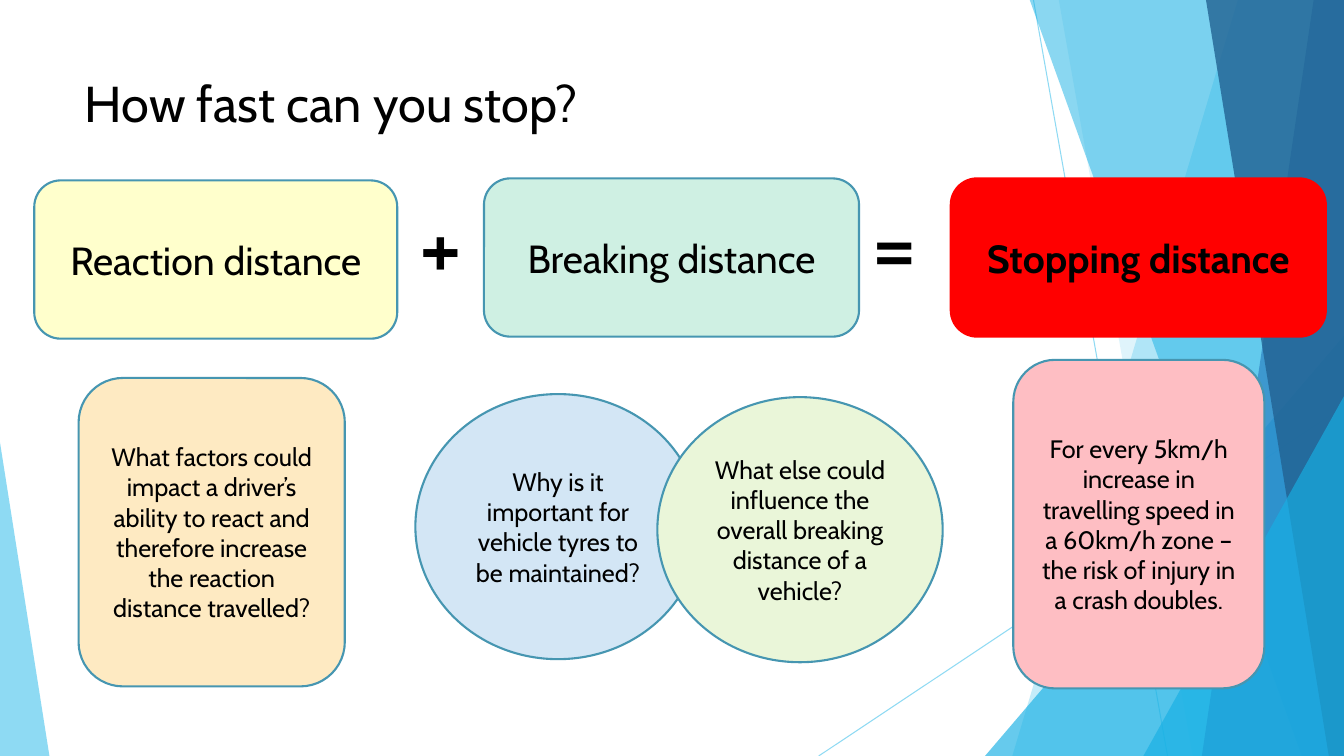
from dataclasses import dataclass

from lxml.etree import SubElement
from pptx import Presentation
from pptx.dml.color import RGBColor
from pptx.dml.fill import FillFormat
from pptx.enum.shapes import MSO_CONNECTOR, MSO_SHAPE
from pptx.enum.text import MSO_ANCHOR, MSO_AUTO_SIZE, PP_ALIGN
from pptx.oxml.ns import qn
from pptx.shapes.autoshape import Shape
from pptx.slide import Slide
from pptx.text.text import TextFrame
from pptx.util import Inches, Pt

WIDTH, HEIGHT = 13.33, 7.5
TOP = -0.01
FONT = "Cabin"
BLACK, OUTLINE = "000000", "4696B1"
SKY, AZURE, STEEL, NAVY = "5FCBEF", "17B0E4", "2E83C3", "226292"
ROUNDED, OVAL = MSO_SHAPE.ROUNDED_RECTANGLE, MSO_SHAPE.OVAL


@dataclass
class Ray:
    start: tuple[float, float]
    end: tuple[float, float]


@dataclass
class Band:
    """Facet reaching the right edge, from top_left down to bottom_left."""
    top_left: float
    bottom_left: float
    color: str
    opacity: int


@dataclass
class Wedge:
    left: float
    top: float
    width: float
    tip: float
    color: str
    opacity: int


@dataclass
class Card:
    text: str
    left: float
    top: float
    width: float
    height: float
    fill: str
    kind: MSO_SHAPE = ROUNDED
    size: int = 18
    line: str = OUTLINE
    bold: bool = False


@dataclass
class Operator:
    text: str
    left: float


RAYS = [Ray((10.25, 0), (11.58, HEIGHT)), Ray((WIDTH, 4.03), (8.12, HEIGHT))]

FACETS = [
    Band(12.28, 10.04, SKY, 36),
    Band(10.5, 11.83, SKY, 20),
    Wedge(9.77, 3.33, 3.56, 1, AZURE, 66),
    Band(10.21, 12.91, AZURE, 50),
    Band(13.03, 11.92, STEEL, 70),
    Band(11.96, 13.18, NAVY, 80),
    Wedge(11.34, 3.93, 1.99, 1, AZURE, 66),
    Wedge(0, 4.39, 0.49, 0, SKY, 70),
]

OPERATORS = [Operator("+", 3.92), Operator("=", 8.42)]

CARDS = [
    Card("Stopping distance", 9.43, 1.77, 3.72, 1.57, "FF0000",
         size=28, line="FF0000", bold=True),
    Card("Why is it important for vehicle tyres to be maintained?",
         4.12, 3.91, 2.83, 2.63, "D3E6F5", OVAL),
    Card("What factors could impact a driver’s ability to react and "
         "therefore increase the reaction distance travelled?",
         0.78, 3.75, 2.64, 3.06, "FEEAC2"),
    Card("What else could influence the overall breaking distance of a vehicle?",
         6.52, 3.94, 2.83, 2.63, "EAF6D9", OVAL),
    Card("For every 5km/h increase in travelling speed in a 60km/h zone – "
         "the risk of injury in a crash doubles.",
         10.05, 3.57, 2.49, 3.26, "FEBEC3"),
    Card("Reaction distance", 0.34, 1.79, 3.6, 1.57, "FFFFCC", size=28),
    Card("Breaking distance", 4.8, 1.77, 3.72, 1.57, "CFF0E3", size=28),
]


def paint(fill: FillFormat, color: str) -> None:
    fill.solid()
    fill.fore_color.rgb = RGBColor.from_string(color)


def fade(element, opacity: int) -> None:
    color = next(element.iter(qn("a:srgbClr")))
    SubElement(color, qn("a:alpha"), val=str(opacity * 1000))


def write(frame: TextFrame, text: str, size: int, bold: bool = False,
          align: PP_ALIGN = PP_ALIGN.CENTER,
          anchor: MSO_ANCHOR = MSO_ANCHOR.MIDDLE) -> None:
    frame_format = {"word_wrap": True, "auto_size": MSO_AUTO_SIZE.NONE,
                    "vertical_anchor": anchor}
    for name, value in frame_format.items():
        setattr(frame, name, value)
    para = frame.paragraphs[0]
    para.alignment = align
    span = para.add_run()
    span.text = text
    font_format = {"name": FONT, "size": Pt(size), "bold": bold}
    for name, value in font_format.items():
        setattr(span.font, name, value)
    paint(span.font.fill, BLACK)


def draw_ray(page: Slide, ray: Ray) -> None:
    points = [Inches(value) for value in (*ray.start, *ray.end)]
    line = page.shapes.add_connector(MSO_CONNECTOR.STRAIGHT, *points)
    line.line.width = Pt(0.75)
    paint(line.line.fill, SKY)
    properties = line._element.spPr
    fade(properties, 70)
    SubElement(properties, qn("a:effectLst"))


def outline_band(page: Slide, band: Band) -> Shape:
    corners = [(band.top_left, TOP), (WIDTH, TOP),
               (WIDTH, HEIGHT), (band.bottom_left, HEIGHT)]
    start, *others = [(Inches(x), Inches(y)) for x, y in corners]
    builder = page.shapes.build_freeform(*start)
    builder.add_line_segments(others, close=True)
    return builder.convert_to_shape()


def outline_wedge(page: Slide, wedge: Wedge) -> Shape:
    shape = page.shapes.add_shape(
        MSO_SHAPE.ISOSCELES_TRIANGLE, Inches(wedge.left), Inches(wedge.top),
        Inches(wedge.width), Inches(HEIGHT - wedge.top))
    shape.adjustments[0] = wedge.tip
    return shape


def draw_facet(page: Slide, facet: Band | Wedge) -> None:
    outline = outline_band if isinstance(facet, Band) else outline_wedge
    shape = outline(page, facet)
    shape.shadow.inherit = False
    shape.line.fill.background()
    paint(shape.fill, facet.color)
    fade(shape._element.spPr, facet.opacity)


def draw_operator(page: Slide, operator: Operator) -> None:
    box = page.shapes.add_textbox(
        Inches(operator.left), Inches(2.01), Inches(0.91), Inches(0.79))
    write(box.text_frame, operator.text, 66)


def draw_card(page: Slide, card: Card) -> None:
    box = page.shapes.add_shape(
        card.kind, Inches(card.left), Inches(card.top),
        Inches(card.width), Inches(card.height))
    box.shadow.inherit = False
    paint(box.fill, card.fill)
    paint(box.line.fill, card.line)
    box.line.width = Pt(1.5)
    write(box.text_frame, card.text, card.size, card.bold)


def main() -> None:
    deck = Presentation()
    deck.slide_width, deck.slide_height = Inches(WIDTH), Inches(HEIGHT)
    page = deck.slides.add_slide(deck.slide_layouts[5])

    # Faceted background
    for ray in RAYS:
        draw_ray(page, ray)
    for facet in FACETS:
        draw_facet(page, facet)

    # Title
    title = page.shapes.title
    title_place = {"left": 0.74, "top": 0.67, "width": 9.4, "height": 1.44}
    for name, value in title_place.items():
        setattr(title, name, Inches(value))
    write(title.text_frame, "How fast can you stop?", 36,
          align=PP_ALIGN.LEFT, anchor=MSO_ANCHOR.TOP)

    # Distance equation and discussion prompts
    for operator in OPERATORS:
        draw_operator(page, operator)
    for card in CARDS:
        draw_card(page, card)

    deck.save("out.pptx")


if __name__ == "__main__":
    main()
